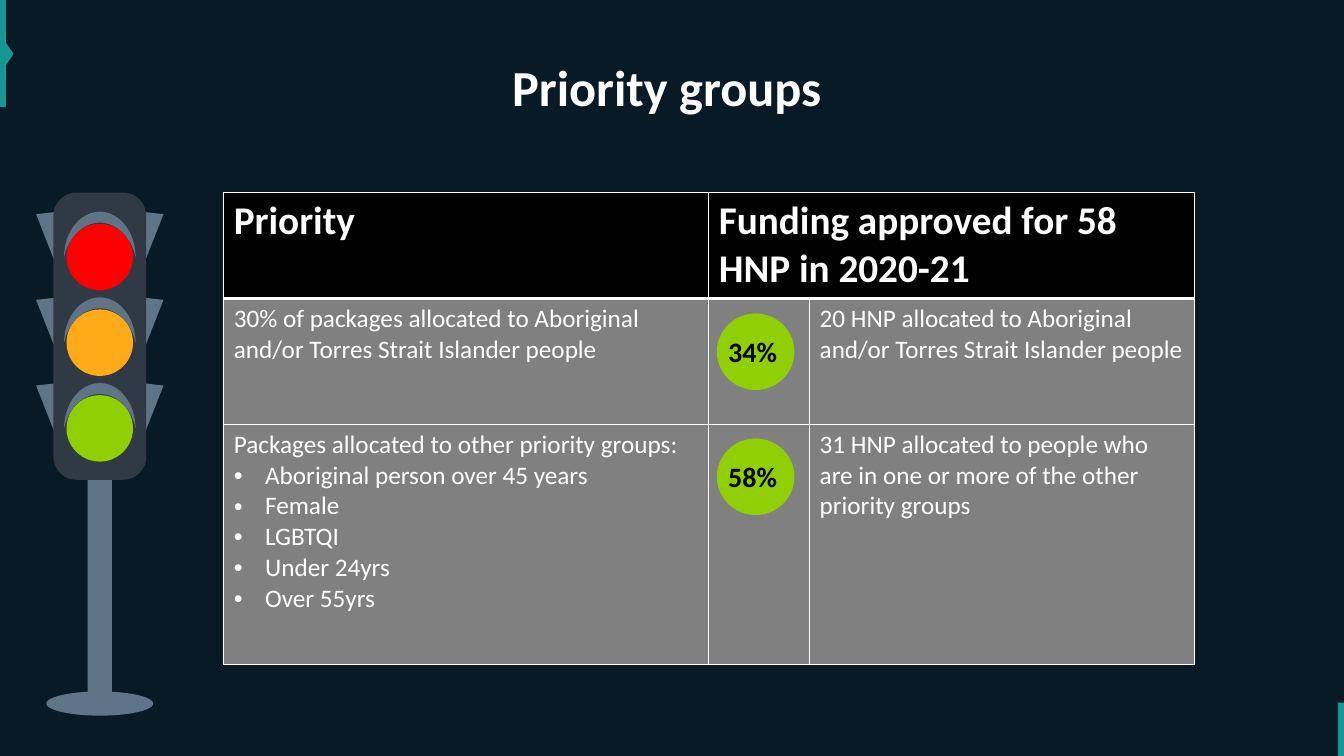
import math
from dataclasses import dataclass

from lxml import etree
from pptx import Presentation
from pptx.dml.color import RGBColor
from pptx.enum import shapes, text
from pptx.oxml.ns import qn
from pptx.util import Inches, Pt

# Content
TITLE = "Priority groups"
HEADERS = ["Priority", "Funding approved for 58 HNP in 2020-21"]
ROWS = [
    {
        "priority": "30% of packages allocated to Aboriginal and/or Torres Strait Islander people",
        "groups": [],
        "share": "34%",
        "result": "20 HNP allocated to Aboriginal and/or Torres Strait Islander people",
    },
    {
        "priority": "Packages allocated to other priority groups:",
        "groups": ["Aboriginal person over 45 years", "Female", "LGBTQI", "Under 24yrs", "Over 55yrs"],
        "share": "58%",
        "result": "31 HNP allocated to people who are in one or more of the other priority groups",
    },
]


@dataclass
class Theme:
    font: str = "Calibri"
    back: str = "081A26"
    accent: str = "159794"
    steel: str = "607488"
    housing: str = "303A44"
    red: str = "FF0000"
    amber: str = "FFAA19"
    green: str = "90CF03"
    white: str = "FFFFFF"
    black: str = "000000"
    grey: str = "808080"
    title: int = 36
    header: int = 28
    badge: int = 20
    body: int = 18


T = Theme()
SHAPE = shapes.MSO_SHAPE

# Layout, in inches
SLIDE_W, SLIDE_H = 13.33, 7.5
TABLE_X, TABLE_Y = 2.22, 1.91
COLS = [4.81, 1, 3.82]
HEIGHTS = [0.83, 1.25, 2.38]  # the header row grows to hold two lines
BADGE_X, BADGE_Y, BADGE_STEP = 7.11, 3.11, 1.24
BADGE_W, BADGE_H = 0.77, 0.76
LIGHT_X, LIGHT_Y, LIGHT_STEP = 0.99, 2.55, 0.85
LENS_R = 0.33
VISOR_W, VISOR_H, VISOR_DEPTH = 0.71, 0.45, 0.24
WING_R, WING_DX, WING_RISE, WING_TILT = 0.36, 0.5, 0.09, 111.5


def write(p, words, size, color=T.white, bold=False, align=None, bullet=False):
    r = p.add_run()
    r.text = words
    r.font.name, r.font.size, r.font.bold = T.font, Pt(size), bold
    r.font.color.rgb = RGBColor.from_string(color)
    if align is not None:
        p.alignment = align
    if bullet:
        ppr = p._p.get_or_add_pPr()
        ppr.set("marL", str(Inches(0.31)))
        ppr.set("indent", str(-Inches(0.31)))
        etree.SubElement(ppr, qn("a:buFont"), typeface="Arial")
        etree.SubElement(ppr, qn("a:buChar"), char="•")


def paint(sp, color):
    sp.shadow.inherit = False
    sp.fill.solid()
    sp.fill.fore_color.rgb = RGBColor.from_string(color)
    sp.line.fill.background()
    return sp


def add(parent, kind, x, y, w, h, color):
    return paint(parent.shapes.add_shape(kind, Inches(x), Inches(y), Inches(w), Inches(h)), color)


def arc(cx, cy, radius, start, end, steps=6):
    angles = [math.radians(start + (end - start) * i / steps) for i in range(steps + 1)]
    return [(cx + radius * math.cos(a), cy + radius * math.sin(a)) for a in angles]


def outline(parent, points, color):
    pts = [(Inches(x), Inches(y)) for x, y in points]
    fb = parent.shapes.build_freeform(*pts[0])
    fb.add_line_segments(pts[1:], close=True)
    return paint(fb.convert_to_shape(), color)


def style_cell(cell, color, top, bottom):
    cell.fill.solid()
    cell.fill.fore_color.rgb = RGBColor.from_string(color)
    tcpr = cell._tc.get_or_add_tcPr()
    for i, (side, width) in enumerate([("L", 1), ("R", 1), ("T", top), ("B", bottom)]):
        ln = etree.Element(qn("a:ln" + side), w=str(Pt(width)))
        fill = etree.SubElement(ln, qn("a:solidFill"))
        etree.SubElement(fill, qn("a:srgbClr"), val=T.white)
        tcpr.insert(i, ln)


prs = Presentation()
prs.slide_width, prs.slide_height = Inches(SLIDE_W), Inches(SLIDE_H)
s = prs.slides.add_slide(prs.slide_layouts[5])

# Backdrop and edge accents
add(s, SHAPE.RECTANGLE, 0, 0, SLIDE_W, SLIDE_H, T.back)
marker = s.shapes.add_group_shape()
add(marker, SHAPE.RECTANGLE, 0, 0, 0.06, 1.06, T.accent)
add(marker, SHAPE.ISOSCELES_TRIANGLE, -0.08, 0.48, 0.32, 0.11, T.accent).rotation = 90
add(s, SHAPE.RECTANGLE, 13.27, 6.97, 0.06, 0.53, T.accent)

# Title, raised above the backdrop
title = s.shapes.title
s.shapes._spTree.append(title._element)
title.left, title.top, title.width, title.height = map(Inches, (0.68, 0.33, 11.97, 1.06))
tf = title.text_frame
tf.margin_left, tf.vertical_anchor = 0, text.MSO_ANCHOR.MIDDLE
write(tf.paragraphs[0], TITLE, T.title, bold=True, align=text.PP_ALIGN.CENTER)

# Traffic light: base, post, side wings, housing, then lenses with visors
signal = s.shapes.add_group_shape()
lights = [(LIGHT_Y + i * LIGHT_STEP, c) for i, c in enumerate([T.red, T.amber, T.green])]
add(signal, SHAPE.OVAL, 0.46, 6.86, 1.06, 0.24, T.steel)
add(signal, SHAPE.RECTANGLE, 0.87, 3.64, 0.24, 3.39, T.steel)
for y, _ in lights:
    wing = arc(LIGHT_X + WING_DX, y - WING_RISE, WING_R, WING_TILT, WING_TILT + 180)
    outline(signal, wing, T.steel)
    outline(signal, [(2 * LIGHT_X - px, py) for px, py in wing], T.steel)
add(signal, SHAPE.ROUNDED_RECTANGLE, 0.53, 1.91, 0.92, 2.85, T.housing).adjustments[0] = 0.25
for y, color in lights:
    add(signal, SHAPE.OVAL, LIGHT_X - LENS_R, y - LENS_R, 2 * LENS_R, 2 * LENS_R, color)
    visor = add(signal, SHAPE.MOON, LIGHT_X - VISOR_H / 2, y - (VISOR_H + VISOR_W) / 2,
                VISOR_H, VISOR_W, T.steel)
    visor.adjustments[0] = VISOR_DEPTH
    visor.rotation = 90

# Table
table = s.shapes.add_table(len(HEIGHTS), len(COLS), Inches(TABLE_X), Inches(TABLE_Y),
                           Inches(sum(COLS)), Inches(sum(HEIGHTS))).table
table.horz_banding = False
for col, w in zip(table.columns, COLS):
    col.width = Inches(w)
for i, (row, h) in enumerate(zip(table.rows, HEIGHTS)):
    row.height = Inches(h)
    for cell in row.cells:
        style_cell(cell, T.grey if i else T.black, 3 if i == 1 else 1, 1 if i else 3)
table.cell(0, 1).merge(table.cell(0, 2))
for j, header in enumerate(HEADERS):
    write(table.cell(0, j).text_frame.paragraphs[0], header, T.header, bold=True)

# Table rows and their percentage badges
for i, row in enumerate(ROWS):
    tf = table.cell(i + 1, 0).text_frame
    write(tf.paragraphs[0], row["priority"], T.body)
    for group in row["groups"]:
        write(tf.add_paragraph(), group, T.body, bullet=True)
    write(table.cell(i + 1, 2).text_frame.paragraphs[0], row["result"], T.body)
    badge = add(s, SHAPE.OVAL, BADGE_X, BADGE_Y + i * BADGE_STEP, BADGE_W, BADGE_H, T.green)
    tf = badge.text_frame
    tf.margin_left = tf.margin_right = 0
    tf.word_wrap, tf.vertical_anchor = True, text.MSO_ANCHOR.MIDDLE
    write(tf.paragraphs[0], row["share"], T.badge, color=T.black, bold=True, align=text.PP_ALIGN.LEFT)

prs.save("out.pptx")
